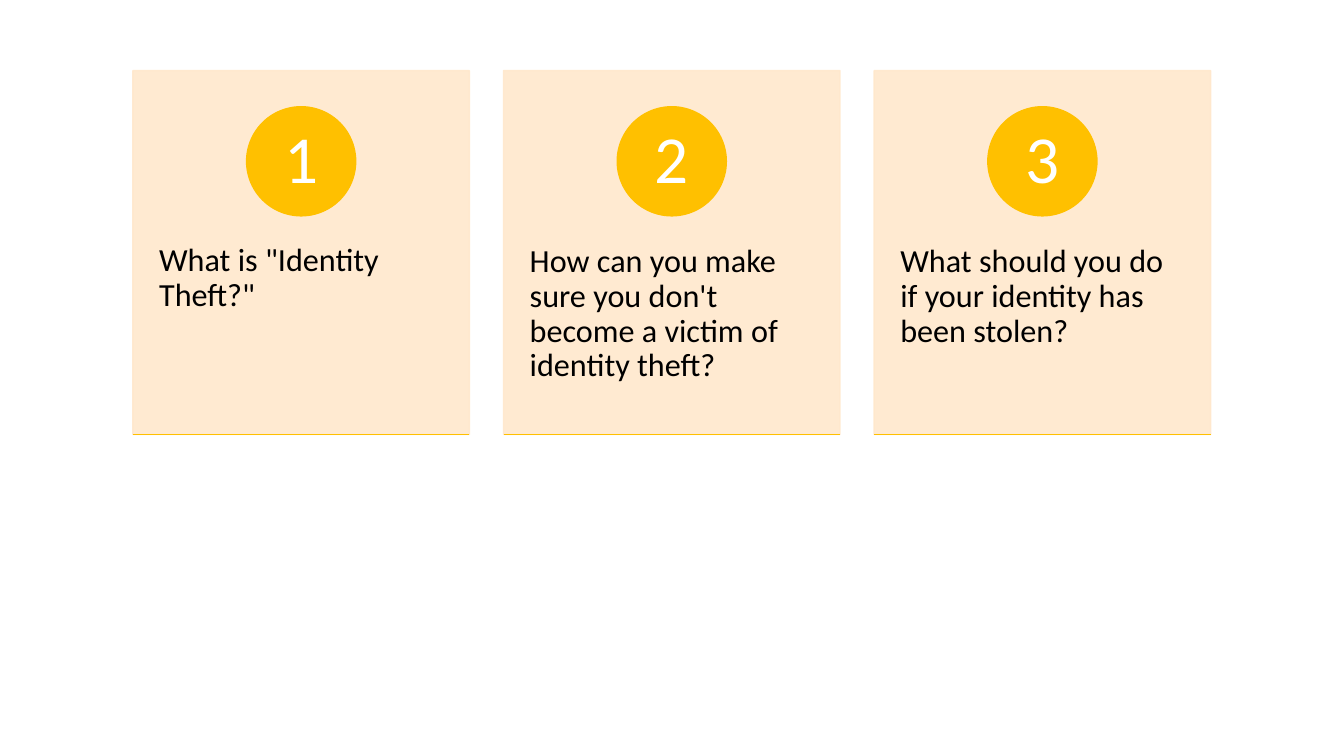
from lxml.etree import SubElement
from pptx import Presentation
from pptx.dml.color import RGBColor
from pptx.enum.shapes import MSO_CONNECTOR, MSO_SHAPE
from pptx.enum.text import MSO_ANCHOR, PP_ALIGN
from pptx.oxml.ns import qn
from pptx.util import Cm, Pt

QUESTIONS = [
    'What is "Identity Theft?"',
    "How can you make sure you don't become a victim of identity theft?",
    "What should you do if your identity has been stolen?",
]
CARD_LEFT, CARD_TOP = 3.35, 1.78
CARD_WIDTH, CARD_HEIGHT = 8.48, 9.17
CARD_STEP = 9.34
CIRCLE_TOP, CIRCLE_SIZE = 2.69, 2.75
QUESTION_TOP, QUESTION_HEIGHT = 5.26, 5.49


def color(hex_string):
    return RGBColor.from_string(hex_string)


def set_opacity(properties, percent):
    """Add an alpha value to every colour in the shape properties."""
    for rgb in properties.iter(qn("a:srgbClr")):
        SubElement(rgb, qn("a:alpha")).set("val", str(percent * 1000))


class CardSlide:
    font = "Calibri"
    card_color = "FFE8CC"
    accent = "FFC000"

    def __init__(self, presentation):
        self.slide = presentation.slides.add_slide(presentation.slide_layouts[6])

    def block(self, kind, left, top, width, height, fill, opacity=100):
        shape = self.slide.shapes.add_shape(
            kind, Cm(left), Cm(top), Cm(width), Cm(height))
        shape.shadow.inherit = False
        shape.fill.solid()
        shape.fill.fore_color.rgb = color(fill)
        shape.line.color.rgb = color(fill)
        shape.line.width = Pt(1)
        if opacity < 100:
            set_opacity(shape._element.spPr, opacity)
        return shape

    def add_text(self, shape, text, size, text_color, align, anchor, side, edge):
        """Fill a shape with one run; side and edge are its margins in cm."""
        frame = shape.text_frame
        frame.word_wrap = True
        frame.vertical_anchor = anchor
        frame.margin_left = frame.margin_right = Cm(side)
        frame.margin_top = frame.margin_bottom = Cm(edge)
        paragraph = frame.paragraphs[0]
        paragraph.alignment = align
        paragraph.line_spacing = 0.9
        run = paragraph.add_run()
        run.text = text
        run.font.name = self.font
        run.font.size = Pt(size)
        run.font.color.rgb = color(text_color)

    def question(self, left, text):
        box = self.slide.shapes.add_textbox(
            Cm(left), Cm(QUESTION_TOP), Cm(CARD_WIDTH), Cm(QUESTION_HEIGHT))
        self.add_text(box, text, 23, "000000",
                      PP_ALIGN.LEFT, MSO_ANCHOR.TOP, 0.66, 0.91)

    def number(self, left, value):
        circle = self.block(MSO_SHAPE.OVAL, left, CIRCLE_TOP,
                            CIRCLE_SIZE, CIRCLE_SIZE, self.accent)
        self.add_text(circle, str(value), 48, "FFFFFF",
                      PP_ALIGN.CENTER, MSO_ANCHOR.MIDDLE, 0.2, 0.03)

    def underline(self, left, top, width):
        line = self.slide.shapes.add_connector(
            MSO_CONNECTOR.STRAIGHT, Cm(left), Cm(top), Cm(left + width), Cm(top))
        line.line.color.rgb = color(self.accent)
        line.line.width = Pt(1)
        SubElement(line._element.spPr, qn("a:effectLst"))

    def card(self, left, value, text):
        self.block(MSO_SHAPE.RECTANGLE, left, CARD_TOP,
                   CARD_WIDTH, CARD_HEIGHT, self.card_color, opacity=90)
        self.question(left, text)
        self.number(left + (CARD_WIDTH - CIRCLE_SIZE) / 2, value)
        self.underline(left, CARD_TOP + CARD_HEIGHT, CARD_WIDTH)


def main():
    presentation = Presentation()
    presentation.slide_width = Cm(33.87)
    presentation.slide_height = Cm(19.05)
    card_slide = CardSlide(presentation)
    for index, text in enumerate(QUESTIONS):
        card_slide.card(CARD_LEFT + index * CARD_STEP, index + 1, text)
    presentation.save("out.pptx")


if __name__ == "__main__":
    main()
